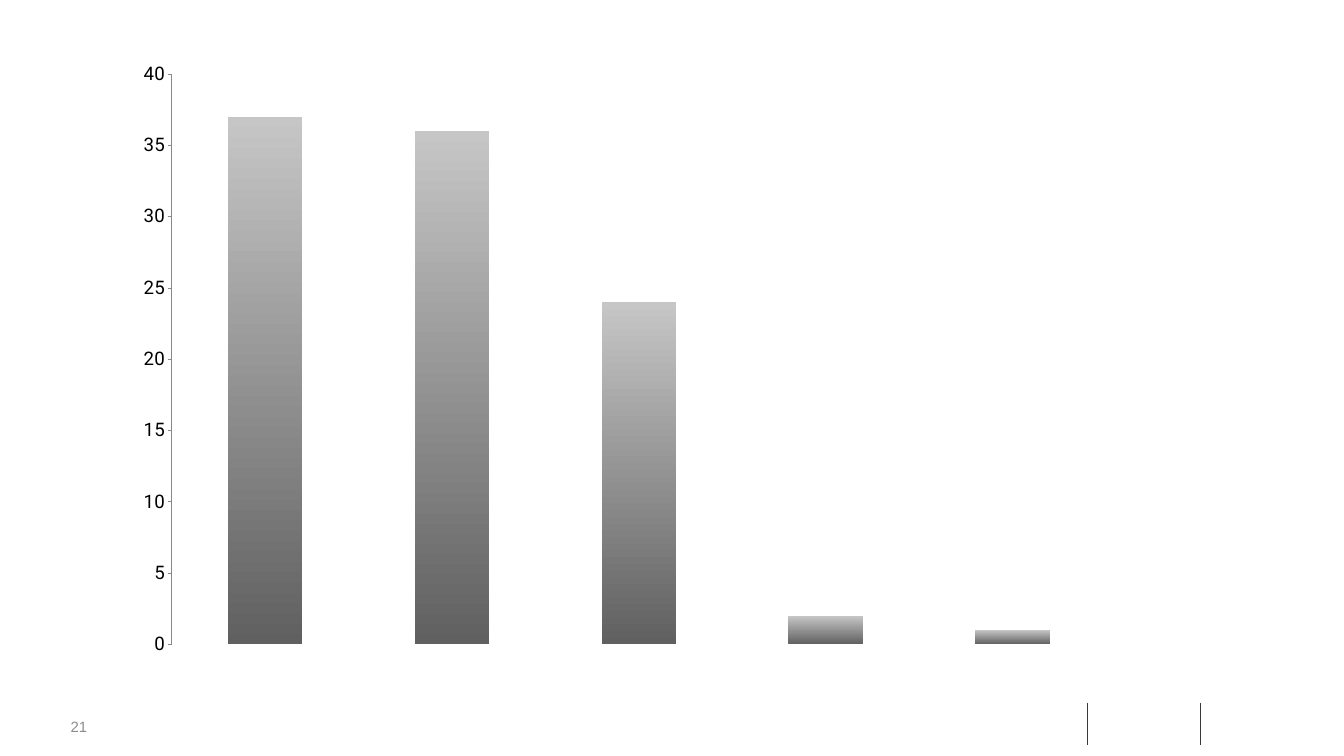
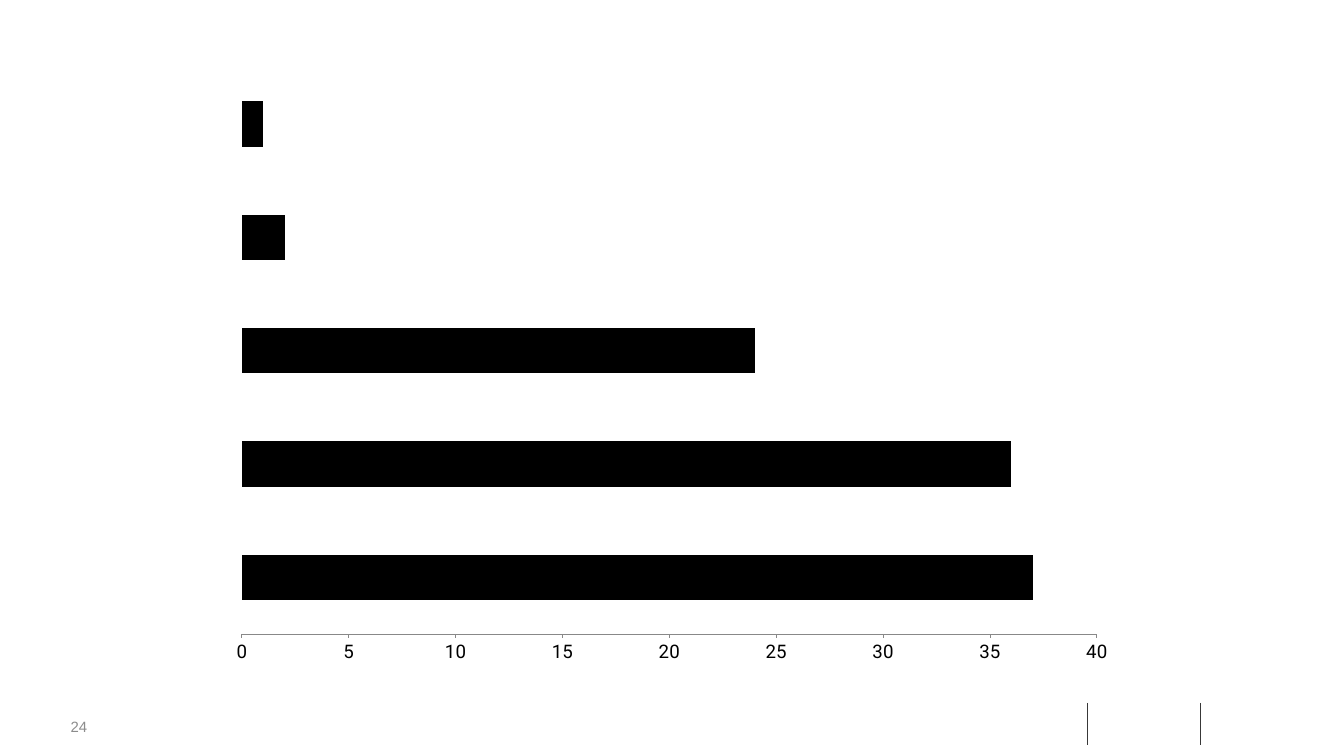
from pptx import Presentation
from pptx.chart.data import CategoryChartData
from pptx.dml.color import RGBColor
from pptx.enum.chart import XL_CHART_TYPE, XL_TICK_MARK
from pptx.enum.shapes import MSO_CONNECTOR
from pptx.enum.text import MSO_ANCHOR, MSO_AUTO_SIZE
from pptx.oxml.ns import qn
from pptx.util import Pt
from lxml import etree

COLUMN = XL_CHART_TYPE.COLUMN_CLUSTERED
BAR = XL_CHART_TYPE.BAR_CLUSTERED
STRAIGHT = MSO_CONNECTOR.STRAIGHT
MIDDLE = MSO_ANCHOR.MIDDLE
GROW = MSO_AUTO_SIZE.SHAPE_TO_FIT_TEXT
TICK_OUT = XL_TICK_MARK.OUTSIDE
TICK_NONE = XL_TICK_MARK.NONE

THEME = {
    "rule": RGBColor.from_string("383838"),
    "axis": RGBColor.from_string("888888"),
    "black": RGBColor.from_string("000000"),
    "dark": RGBColor.from_string("606060"),
    "light": RGBColor.from_string("C6C6C6"),
    "number": {"name": "Arial", "size": Pt(16), "color": RGBColor.from_string("8C8C8C")},
    "chart": {"name": "Calibri", "size": Pt(10), "color": RGBColor.from_string("000000")},
    "ticks": {"name": "Roboto", "size": Pt(20), "color": RGBColor.from_string("000000")},
}
VALUES = (37, 36, 24, 2, 1)
SLIDES = [
    {"number": "21", "type": COLUMN, "box": (132.5, 54, 1074.25, 661.7), "gradient": True},
    {"number": "24", "type": BAR, "box": (234, 59, 972, 664.6), "gradient": False},
]


def set_font(font, style):
    for key, value in style.items():
        if key == "color":
            font.color.rgb = value
        else:
            setattr(font, key, value)


def add_footer(s, number):
    for x in (1165, 1286):
        line = s.shapes.add_connector(STRAIGHT, Pt(x), Pt(753), Pt(x), Pt(798.5))
        line.line.color.rgb = THEME["rule"]
        line.line.width = Pt(1)
        etree.SubElement(line._element.spPr, qn("a:effectLst"))

    sp = s.shapes.add_textbox(Pt(75.6), Pt(769), Pt(42.5), Pt(19.4))
    tf = sp.text_frame
    frame = {"margin_left": 0, "margin_top": 0, "margin_right": 0, "margin_bottom": 0,
             "word_wrap": True, "vertical_anchor": MIDDLE, "auto_size": GROW}
    for key, value in frame.items():
        setattr(tf, key, value)
    r = tf.paragraphs[0].add_run()
    r.text = number
    set_font(r.font, THEME["number"])


prs = Presentation()
prs.slide_width, prs.slide_height = Pt(1440), Pt(810)

for page in SLIDES:
    s = prs.slides.add_slide(prs.slide_layouts[6])
    add_footer(s, page["number"])

    data = CategoryChartData()
    data.categories = [str(n + 1) for n in range(len(VALUES))]
    data.add_series("Series 1", VALUES)
    box = [Pt(v) for v in page["box"]]
    chart = s.shapes.add_chart(page["type"], *box, data).chart
    chart.has_legend = False
    chart.has_title = False
    set_font(chart.font, THEME["chart"])
    chart.category_axis.visible = False

    axis = chart.value_axis
    scale = {"minimum_scale": 0, "maximum_scale": 40, "major_unit": 5,
             "has_major_gridlines": False, "major_tick_mark": TICK_OUT,
             "minor_tick_mark": TICK_NONE}
    for key, value in scale.items():
        setattr(axis, key, value)
    axis.format.line.color.rgb = THEME["axis"]
    set_font(axis.tick_labels.font, THEME["ticks"])

    plot = chart.plots[0]
    plot.gap_width = 150
    plot.vary_by_categories = False
    fill = plot.series[0].format.fill
    if page["gradient"]:
        fill.gradient()
        fill.gradient_angle = 90
        for stop, name in zip(fill.gradient_stops, ("dark", "light")):
            stop.color.rgb = THEME[name]
    else:
        fill.solid()
        fill.fore_color.rgb = THEME["black"]

prs.save("out.pptx")
